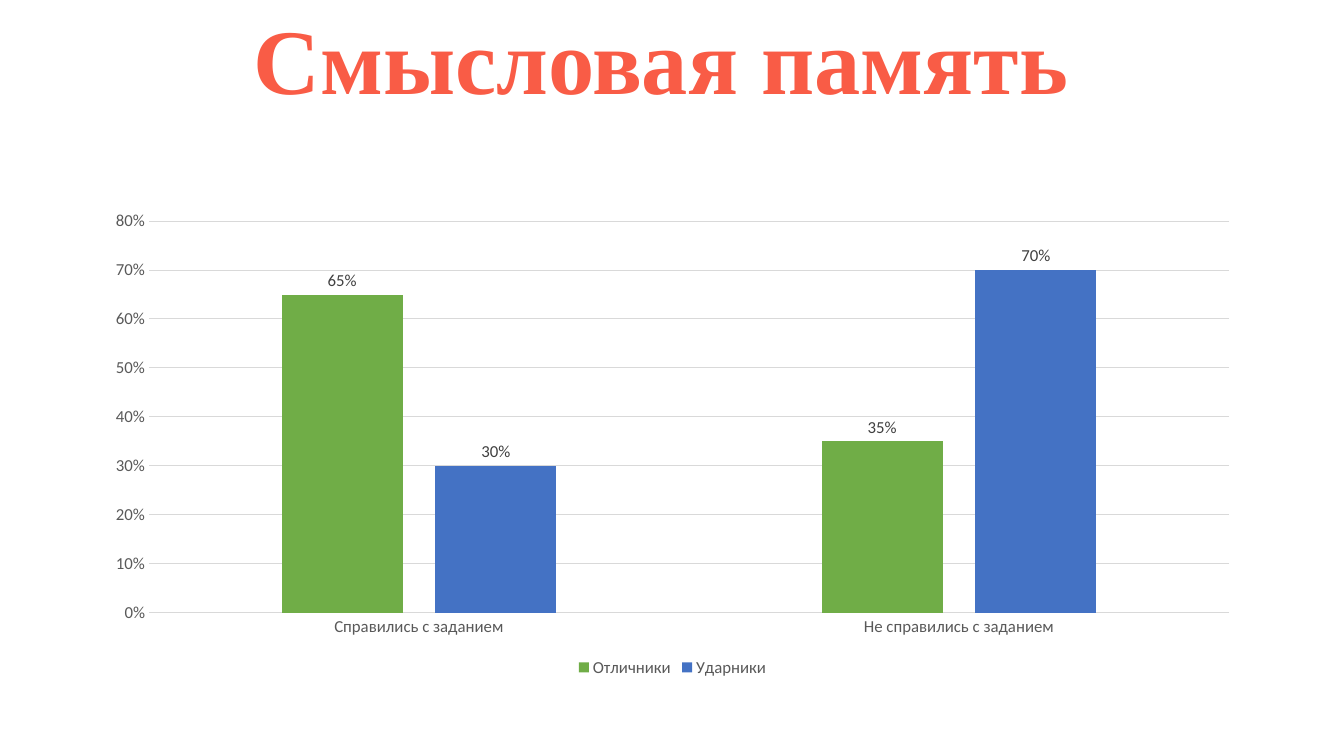
from dataclasses import dataclass

from pptx import Presentation
from pptx import util as u
from pptx.chart.data import CategoryChartData
from pptx.dml.color import RGBColor
from pptx.enum import chart as charts, text


@dataclass(frozen=True)
class Theme:
    """Colours, fonts and type sizes of the slide."""
    title_font: str = "Times New Roman"
    body_font: str = "Calibri"
    title_size: int = 66
    body_size: int = 12
    title: str = "F95C46"
    axis_text: str = "595959"
    label_text: str = "404040"
    rule: str = "D9D9D9"
    series: tuple = ("70AD47", "4472C4")


THEME = Theme()
CATEGORIES = ("Справились с заданием", "Не справились с заданием")
RESULTS = {"Отличники": (0.65, 0.35), "Ударники": (0.3, 0.7)}


def apply(target, values):
    """Set every attribute named in a dict of format values."""
    for name, value in values.items():
        setattr(target, name, value)


def set_font(font, name, size, color, bold=False):
    """Format a font from theme values."""
    apply(font, {"name": name, "size": u.Pt(size), "bold": bold})
    font.color.rgb = RGBColor.from_string(color)


def set_rule(line):
    """Draw a thin grey line."""
    line.color.rgb = RGBColor.from_string(THEME.rule)
    line.width = u.Pt(0.75)


def add_title(slide, box, wording):
    """Place the centred slide title in its box."""
    frame = slide.shapes.add_textbox(*map(u.Inches, box)).text_frame
    apply(frame, {"word_wrap": True, "vertical_anchor": text.MSO_ANCHOR.MIDDLE})
    paragraph = frame.paragraphs[0]
    apply(paragraph, {"alignment": text.PP_ALIGN.CENTER, "line_spacing": 0.9})
    run = paragraph.add_run()
    run.text = wording
    set_font(run.font, THEME.title_font, THEME.title_size, THEME.title, bold=True)


def add_results_chart(slide, box):
    """Place the clustered column chart of results in its box."""
    data = CategoryChartData(number_format="0%")
    data.categories = CATEGORIES
    for name, values in RESULTS.items():
        data.add_series(name, values)
    chart = slide.shapes.add_chart(
        charts.XL_CHART_TYPE.COLUMN_CLUSTERED, *map(u.Inches, box), data).chart
    apply(chart, {"has_title": False, "has_legend": True})
    set_font(chart.font, THEME.body_font, THEME.body_size, THEME.axis_text)
    apply(chart.legend, {"position": charts.XL_LEGEND_POSITION.BOTTOM,
                         "include_in_layout": False})

    for axis in (chart.category_axis, chart.value_axis):
        apply(axis, {"major_tick_mark": charts.XL_TICK_MARK.NONE,
                     "minor_tick_mark": charts.XL_TICK_MARK.NONE})
    for font in (chart.legend.font, chart.category_axis.tick_labels.font,
                 chart.value_axis.tick_labels.font):
        set_font(font, THEME.body_font, THEME.body_size, THEME.axis_text)
    set_rule(chart.category_axis.format.line)
    chart.value_axis.format.line.fill.background()
    set_rule(chart.value_axis.major_gridlines.format.line)
    apply(chart.value_axis.tick_labels,
          {"number_format": "0%", "number_format_is_linked": False})

    plot = chart.plots[0]
    apply(plot, {"gap_width": 219, "overlap": -27, "vary_by_categories": False})
    for series, color in zip(plot.series, THEME.series):
        series.invert_if_negative = False
        series.format.fill.solid()
        series.format.fill.fore_color.rgb = RGBColor.from_string(color)
        labels = series.data_labels
        apply(labels, {"show_value": True, "number_format": "0%",
                       "number_format_is_linked": False,
                       "position": charts.XL_LABEL_POSITION.OUTSIDE_END})
        set_font(labels.font, THEME.body_font, THEME.body_size, THEME.label_text)


def main():
    """Build and save the presentation."""
    presentation = Presentation()
    apply(presentation, {"slide_width": u.Inches(13.33),
                         "slide_height": u.Inches(7.5)})
    slide = presentation.slides.add_slide(presentation.slide_layouts[6])
    left, width = 0.92, 11.5
    add_title(slide, (left, 0.23, width, 0.83), "Смысловая память ")
    add_results_chart(slide, (left, 2, width, 4.76))
    presentation.save("out.pptx")


if __name__ == "__main__":
    main()
